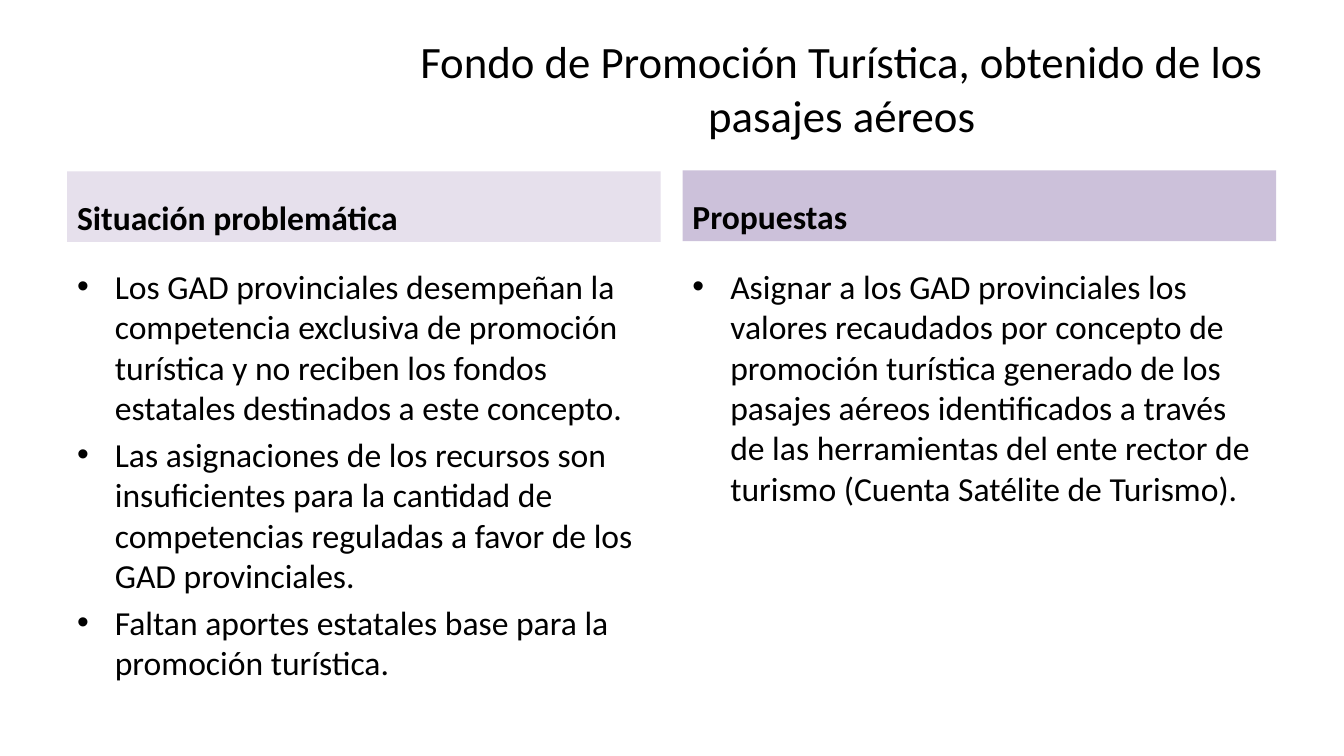
"""Builds a two-column slide on the tourism promotion fund."""
from lxml.etree import SubElement
from pptx import Presentation
from pptx.dml.color import RGBColor
from pptx.enum.shapes import MSO_SHAPE
from pptx.enum.text import MSO_ANCHOR, PP_ALIGN
from pptx.oxml.ns import qn
from pptx.util import Pt

COLUMN_WIDTH = 424
COLUMNS = [
    (48, 122.4, "E6E0EC", "Situación problemática", [
        "Los GAD provinciales desempeñan la competencia exclusiva de promoción turística "
        "y no reciben los fondos estatales destinados a este concepto.",
        "Las asignaciones de los recursos son insuficientes para la cantidad de "
        "competencias reguladas a favor de los GAD provinciales.",
        "Faltan aportes estatales base para la promoción turística.",
    ]),
    (487.6, 121.8, "CCC1DA", "Propuestas", [
        "Asignar a los GAD provinciales los valores recaudados por concepto de promoción "
        "turística generado de los pasajes aéreos identificados a través de las "
        "herramientas del ente rector de turismo (Cuenta Satélite de Turismo).",
    ]),
]


def color(value):
    """Return the colour for a hex string."""
    return RGBColor.from_string(value)


def set_font(para, size, bold=False):
    """Set the slide's typeface on a paragraph."""
    font = para.font
    font.name = "Calibri"
    font.size = Pt(size)
    font.bold = bold
    font.color.rgb = color("000000")


def add_bullet(para):
    """Give a paragraph a hanging round bullet."""
    properties = para._p.get_or_add_pPr()
    properties.set("marL", str(Pt(27)))
    properties.set("indent", str(-Pt(27)))
    SubElement(properties, qn("a:buFont"), typeface="Arial")
    SubElement(properties, qn("a:buChar"), char="•")


def add_title(page, text):
    """Add the centred title."""
    box = page.shapes.add_textbox(Pt(291), Pt(17.3), Pt(620.6), Pt(90))
    frame = box.text_frame
    frame.word_wrap = True
    frame.vertical_anchor = MSO_ANCHOR.MIDDLE
    para = frame.paragraphs[0]
    para.text = text
    para.alignment = PP_ALIGN.CENTER
    set_font(para, 32)


def add_header(page, left, top, fill, text):
    """Add the filled heading of a column."""
    box = page.shapes.add_shape(
        MSO_SHAPE.RECTANGLE, Pt(left), Pt(top), Pt(COLUMN_WIDTH), Pt(50.4))
    box.shadow.inherit = False
    box.fill.solid()
    box.fill.fore_color.rgb = color(fill)
    box.line.fill.background()
    frame = box.text_frame
    frame.word_wrap = True
    frame.vertical_anchor = MSO_ANCHOR.BOTTOM
    para = frame.paragraphs[0]
    para.text = text
    para.alignment = PP_ALIGN.LEFT
    set_font(para, 24, bold=True)


def add_bullets(page, left, items):
    """Add the bulleted text of a column."""
    box = page.shapes.add_textbox(Pt(left), Pt(186.5), Pt(COLUMN_WIDTH), Pt(296))
    frame = box.text_frame
    frame.word_wrap = True
    for index, item in enumerate(items):
        para = frame.add_paragraph() if index else frame.paragraphs[0]
        para.text = item
        add_bullet(para)
        if index:
            para.space_before = Pt(4.8)
        set_font(para, 24)


def main():
    """Build and save the deck."""
    deck = Presentation()
    deck.slide_width, deck.slide_height = Pt(960), Pt(540)
    page = deck.slides.add_slide(deck.slide_layouts[6])
    add_title(page, "Fondo de Promoción Turística, obtenido de los pasajes aéreos")
    for left, top, fill, heading, items in COLUMNS:
        add_header(page, left, top, fill, heading)
        add_bullets(page, left, items)
    deck.save("out.pptx")


if __name__ == "__main__":
    main()
